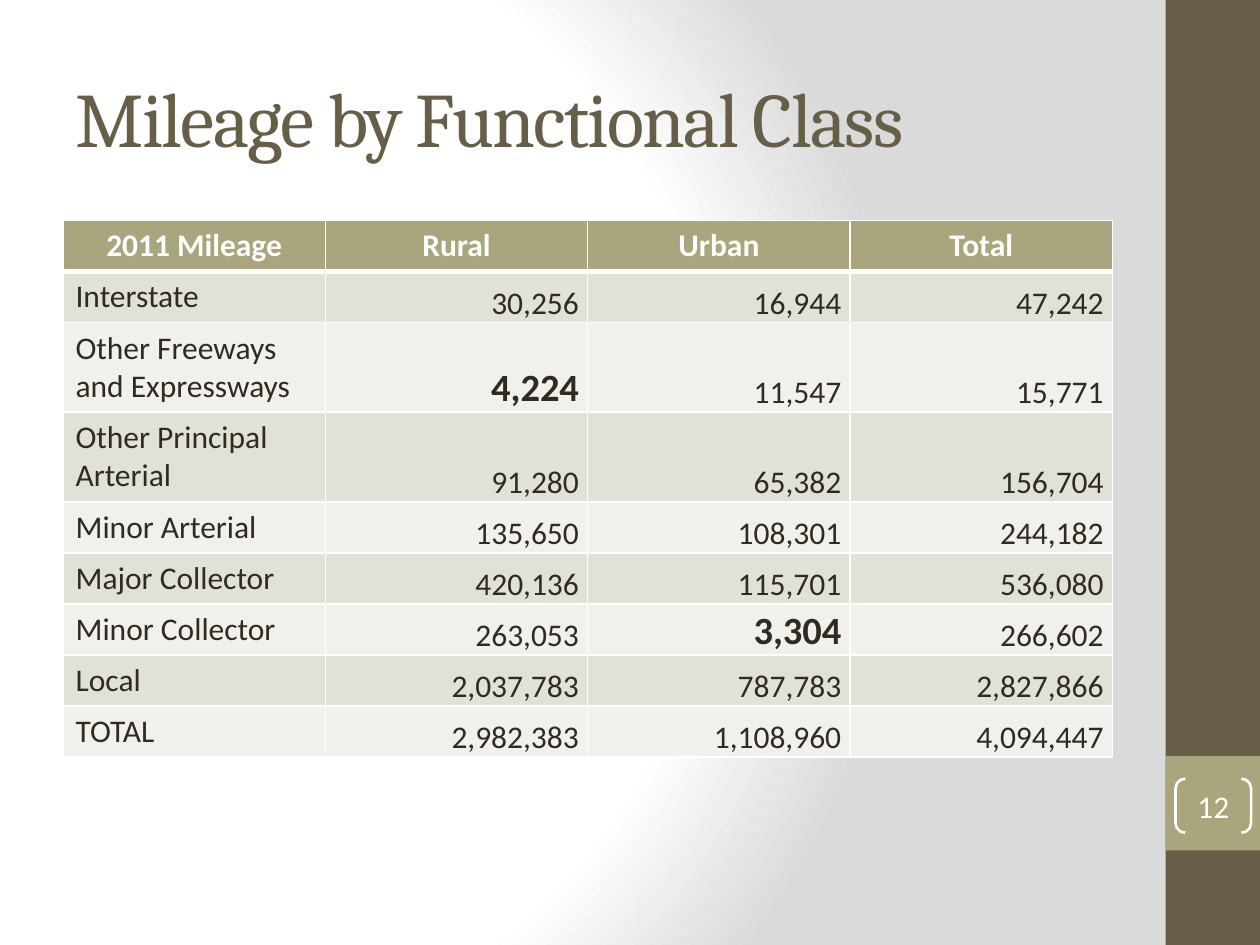
from dataclasses import dataclass

from pptx import Presentation
from pptx.dml.color import RGBColor
from pptx.enum.shapes import MSO_SHAPE
from pptx.enum.text import MSO_ANCHOR, PP_ALIGN
from pptx.oxml import parse_xml
from pptx.oxml.ns import nsdecls, qn
from pptx.util import Inches, Pt


@dataclass(frozen=True)
class Theme:
    brown: str = "675E47"
    olive: str = "A9A57C"
    band_dark: str = "E2E1D7"
    band_light: str = "F1F0EC"
    ink: str = "2F2B20"
    white: str = "FFFFFF"
    grey: str = "DADADA"
    heading_font: str = "Cambria"
    body_font: str = "Calibri"
    title_size: int = 44
    body_size: int = 18
    highlight_size: int = 22


THEME = Theme()
HEADERS = ["2011 Mileage", "Rural", "Urban", "Total"]
MILEAGE = [
    ("Interstate", "30,256", "16,944", "47,242"),
    ("Other Freeways and Expressways", "4,224", "11,547", "15,771"),
    ("Other Principal Arterial", "91,280", "65,382", "156,704"),
    ("Minor Arterial", "135,650", "108,301", "244,182"),
    ("Major Collector", "420,136", "115,701", "536,080"),
    ("Minor Collector", "263,053", "3,304", "266,602"),
    ("Local", "2,037,783", "787,783", "2,827,866"),
    ("TOTAL", "2,982,383", "1,108,960", "4,094,447"),
]
HIGHLIGHTS = {"4,224", "3,304"}
ROW_HEIGHT, TALL_ROW_HEIGHT = Inches(0.4), Inches(0.71)
TWO_LINE_ROWS = {2, 3}


def style_font(font, color, size=THEME.body_size, name=THEME.body_font, bold=False):
    font.name, font.size, font.bold = name, Pt(size), bold
    font.color.rgb = RGBColor.from_string(color)


def set_background(slide):
    slide.background.fill.gradient()
    gradient = slide._element.find(".//" + qn("a:gradFill"))
    stops = "".join(
        f'<a:gs pos="{position * 1000}"><a:srgbClr val="{color}"/></a:gs>'
        for position, color in ((0, THEME.white), (75, THEME.white), (100, THEME.grey))
    )
    gradient.getparent().replace(gradient, parse_xml(
        f'<a:gradFill {nsdecls("a")} rotWithShape="1"><a:gsLst>{stops}</a:gsLst>'
        '<a:path path="circle"><a:fillToRect l="20000" t="50000" r="100000" b="50000"/>'
        "</a:path></a:gradFill>"
    ))


def add_block(slide, box, color):
    block = slide.shapes.add_shape(MSO_SHAPE.RECTANGLE, *box)
    block.shadow.inherit = False
    block.fill.solid()
    block.fill.fore_color.rgb = RGBColor.from_string(color)
    block.line.fill.background()


def add_sidebar(slide, left, top, width, height):
    add_block(slide, (left, top, width, height), THEME.brown)
    number_top = top + Inches(6)
    add_block(slide, (left, number_top, width, width), THEME.olive)

    # Bracketed page number
    bracket = slide.shapes.add_shape(
        MSO_SHAPE.DOUBLE_BRACKET, left + Inches(0.08), number_top + Inches(0.18),
        Inches(0.6), Inches(0.43))
    bracket.adjustments[0] = 0.18
    bracket.shadow.inherit = False
    bracket.fill.background()
    bracket.line.color.rgb = RGBColor.from_string(THEME.white)
    bracket.line.width = Pt(1.5)
    frame = bracket.text_frame
    frame.margin_left = frame.margin_top = frame.margin_right = frame.margin_bottom = 0
    frame.vertical_anchor = MSO_ANCHOR.MIDDLE
    frame.text = "12"
    paragraph = frame.paragraphs[0]
    paragraph.alignment = PP_ALIGN.CENTER
    style_font(paragraph.font, THEME.white)


def add_title(slide, left, top, width, height):
    title = slide.shapes.title
    title.left, title.top, title.width, title.height = left, top, width, height
    frame = title.text_frame
    frame.text = "Mileage by Functional Class"
    frame.vertical_anchor = MSO_ANCHOR.MIDDLE
    paragraph = frame.paragraphs[0]
    paragraph.alignment = PP_ALIGN.LEFT
    style_font(paragraph.font, THEME.brown, THEME.title_size, THEME.heading_font)
    paragraph.runs[0].font._element.set("spc", "-100")


def set_borders(cell, widths):
    properties = cell._tc.get_or_add_tcPr()
    for side, width in widths.items():
        properties.append(parse_xml(
            f'<a:ln{side} {nsdecls("a")} w="{Pt(width)}"><a:solidFill>'
            f'<a:srgbClr val="{THEME.white}"/></a:solidFill></a:ln{side}>'
        ))


def fill_cell(cell, text, row, column):
    is_header, is_number = row == 0, row > 0 and column > 0
    # The header's heavy lower rule also serves as the first body row's upper edge
    if is_header:
        set_borders(cell, {"L": 1, "R": 1, "T": 1, "B": 3})
        color = THEME.olive
    else:
        set_borders(cell, {"L": 1, "R": 1, "T": 3 if row == 1 else 1, "B": 1})
        color = THEME.band_dark if row % 2 else THEME.band_light
    cell.fill.solid()
    cell.fill.fore_color.rgb = RGBColor.from_string(color)

    cell.text = text
    paragraph = cell.text_frame.paragraphs[0]
    if is_header:
        paragraph.alignment = PP_ALIGN.CENTER
    elif is_number:
        paragraph.alignment = PP_ALIGN.RIGHT
        cell.vertical_anchor = MSO_ANCHOR.BOTTOM
        cell.margin_left = cell.margin_top = Inches(0.01)
        cell.margin_right, cell.margin_bottom = Inches(0.07), 0
    highlighted = text in HIGHLIGHTS
    style_font(
        paragraph.font,
        THEME.white if is_header else THEME.ink,
        THEME.highlight_size if highlighted else THEME.body_size,
        bold=is_header or highlighted,
    )


def add_mileage_table(slide, left, top, width):
    rows = [HEADERS, *MILEAGE]
    heights = [TALL_ROW_HEIGHT if row in TWO_LINE_ROWS else ROW_HEIGHT
               for row in range(len(rows))]
    table = slide.shapes.add_table(
        len(rows), len(HEADERS), left, top, width, sum(heights)).table
    for column in table.columns:
        column.width = width // len(HEADERS)
    for row, (texts, height) in enumerate(zip(rows, heights)):
        table.rows[row].height = height
        for column, text in enumerate(texts):
            fill_cell(table.cell(row, column), text, row, column)


def main():
    presentation = Presentation()
    presentation.slide_width, presentation.slide_height = Inches(10), Inches(7.5)
    slide = presentation.slides.add_slide(presentation.slide_layouts[5])
    set_background(slide)
    add_sidebar(slide, Inches(9.25), 0, Inches(0.75), presentation.slide_height)
    add_title(slide, Inches(0.5), Inches(0.3), Inches(8.33), Inches(1.25))
    add_mileage_table(slide, Inches(0.5), Inches(1.75), Inches(8.33))
    presentation.save("out.pptx")


if __name__ == "__main__":
    main()
